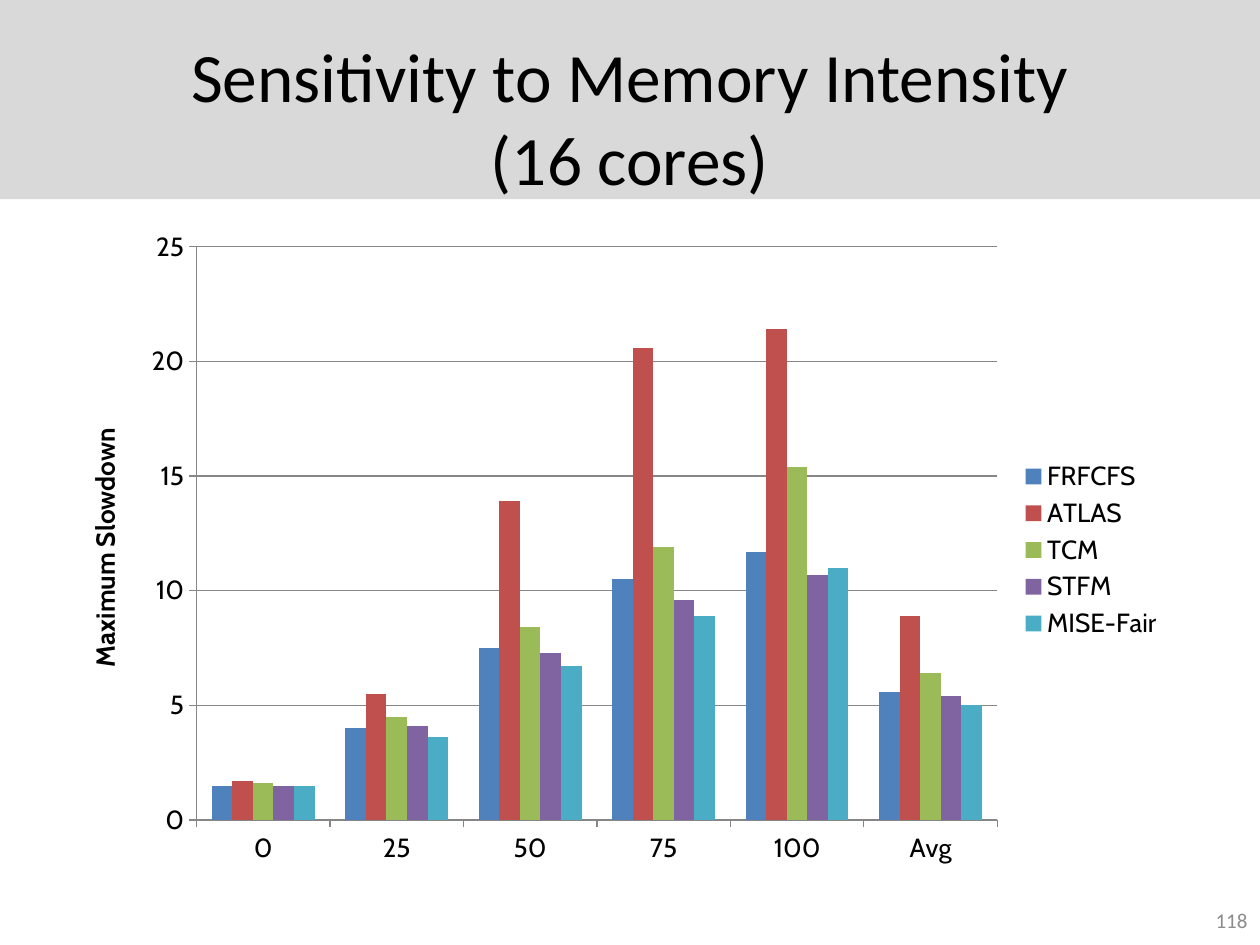
from lxml import etree
from pptx import Presentation
from pptx.chart.data import CategoryChartData
from pptx.dml.color import RGBColor
from pptx.enum.chart import XL_CHART_TYPE, XL_LEGEND_POSITION, XL_TICK_MARK
from pptx.enum.shapes import MSO_SHAPE
from pptx.enum.text import MSO_ANCHOR, MSO_AUTO_SIZE, PP_ALIGN
from pptx.oxml.ns import qn
from pptx.util import Inches, Pt

CLUSTERED = XL_CHART_TYPE.COLUMN_CLUSTERED
RIGHT_LEGEND = XL_LEGEND_POSITION.RIGHT
TICK_OUT = XL_TICK_MARK.OUTSIDE
RECTANGLE = MSO_SHAPE.RECTANGLE
MIDDLE = MSO_ANCHOR.MIDDLE
NO_AUTOFIT = MSO_AUTO_SIZE.NONE
CENTER, RIGHT = PP_ALIGN.CENTER, PP_ALIGN.RIGHT

WIDTH, HEIGHT = Inches(10), Inches(7.5)
COLUMNS, ROWS = 20, 30
TITLE_ONLY = 5
SCHEMES = {
    "FRFCFS": ("4F81BD", (1.5, 4, 7.5, 10.5, 11.7, 5.6)),
    "ATLAS": ("C0504D", (1.7, 5.5, 13.9, 20.6, 21.4, 8.9)),
    "TCM": ("9BBB59", (1.6, 4.5, 8.4, 11.9, 15.4, 6.4)),
    "STFM": ("8064A2", (1.5, 4.1, 7.3, 9.6, 10.7, 5.4)),
    "MISE-Fair": ("4BACC6", (1.5, 3.6, 6.7, 8.9, 11, 5)),
}
INTENSITIES = ("0", "25", "50", "75", "100", "Avg")
PLOT_AREA = {"x": 0.12, "y": 0.04, "w": 0.72, "h": 0.87}


def color(value):
    return RGBColor.from_string(value)


def apply(target, values):
    for name, value in values.items():
        setattr(target, name, value)


class SlideBuilder:
    """Holds the style and the current slide, placing elements on a grid."""

    text_font = "Calibri"
    chart_font = "Cabin"
    chart_size = 15
    ink, muted, band_fill, rule = "000000", "8C8C8C", "D9D9D9", "868686"

    def __init__(self, slide):
        self.slide = slide

    def box(self, column, row, columns, rows):
        return (
            int(WIDTH * column / COLUMNS),
            int(HEIGHT * row / ROWS),
            int(WIDTH * columns / COLUMNS),
            int(HEIGHT * rows / ROWS),
        )

    def style_font(self, font, name, size, ink, bold=False):
        apply(font, {"name": name, "size": Pt(size), "bold": bold})
        font.color.rgb = color(ink)

    def set_text(self, frame, text, size, ink, alignment):
        apply(frame, {
            "text": text,
            "word_wrap": True,
            "auto_size": NO_AUTOFIT,
            "vertical_anchor": MIDDLE,
        })
        for paragraph in frame.paragraphs:
            paragraph.alignment = alignment
            for run in paragraph.runs:
                self.style_font(run.font, self.text_font, size, ink)

    def band(self, *cells):
        band = self.slide.shapes.add_shape(RECTANGLE, *self.box(*cells))
        band.shadow.inherit = False
        band.fill.solid()
        band.fill.fore_color.rgb = color(self.band_fill)
        band.line.fill.background()

    def title(self, text, *cells):
        heading = self.slide.shapes.title
        apply(heading, dict(zip(("left", "top", "width", "height"), self.box(*cells))))
        self.set_text(heading.text_frame, text, 39.6, self.ink, CENTER)
        self.slide.shapes._spTree.append(heading._element)

    def page_number(self, text, *cells):
        number = self.slide.shapes.add_textbox(*self.box(*cells))
        self.set_text(number.text_frame, text, 12, self.muted, RIGHT)

    def style_axis(self, axis):
        apply(axis, {"major_tick_mark": TICK_OUT, "has_major_gridlines": False})
        axis.format.line.color.rgb = color(self.rule)
        self.style_font(axis.tick_labels.font, self.chart_font, self.chart_size, self.ink)

    def place_plot(self, chart, shares):
        area = chart._chartSpace.chart.plotArea
        for old in area.findall(qn("c:layout")):
            area.remove(old)
        layout = etree.Element(qn("c:layout"))
        manual = etree.SubElement(layout, qn("c:manualLayout"))
        settings = {"layoutTarget": "inner", "xMode": "edge", "yMode": "edge", **shares}
        for name, value in settings.items():
            etree.SubElement(manual, qn(f"c:{name}")).set("val", str(value))
        area.insert(0, layout)

    def column_chart(self, categories, schemes, value_title, *cells):
        data = CategoryChartData()
        data.categories = categories
        for name, (_, values) in schemes.items():
            data.add_series(name, values)
        chart = self.slide.shapes.add_chart(CLUSTERED, *self.box(*cells), data).chart
        apply(chart, {"has_title": False, "has_legend": True})
        self.style_font(chart.font, self.text_font, 10, self.ink)

        apply(chart.legend, {"position": RIGHT_LEGEND, "include_in_layout": False})
        self.style_font(chart.legend.font, self.chart_font, self.chart_size, self.ink)

        plot = chart.plots[0]
        apply(plot, {"gap_width": 150, "overlap": 0, "vary_by_categories": False})
        for series, (fill, _) in zip(plot.series, schemes.values()):
            series.format.fill.solid()
            series.format.fill.fore_color.rgb = color(fill)

        self.style_axis(chart.category_axis)
        slowdown = chart.value_axis
        self.style_axis(slowdown)
        apply(slowdown, {
            "minimum_scale": 0,
            "maximum_scale": 25,
            "major_unit": 5,
            "has_major_gridlines": True,
            "has_title": True,
        })
        slowdown.major_gridlines.format.line.color.rgb = color(self.rule)
        caption = slowdown.axis_title.text_frame
        caption.text = value_title
        self.style_font(caption.paragraphs[0].runs[0].font,
                        self.chart_font, self.chart_size, self.ink, bold=True)
        self.place_plot(chart, PLOT_AREA)


def main():
    deck = Presentation()
    apply(deck, {"slide_width": WIDTH, "slide_height": HEIGHT})
    builder = SlideBuilder(deck.slides.add_slide(deck.slide_layouts[TITLE_ONLY]))
    builder.band(0, 0, COLUMNS, 6.32)
    builder.title("Sensitivity to Memory Intensity\v(16 cores)", 1, 1.2, 18, 5)
    builder.column_chart(INTENSITIES, SCHEMES, "Maximum Slowdown", 1, 7, 17.66, 20.92)
    builder.page_number("118", 15.34, 28.4, 4.66, 1.6)
    deck.save("out.pptx")


if __name__ == "__main__":
    main()
